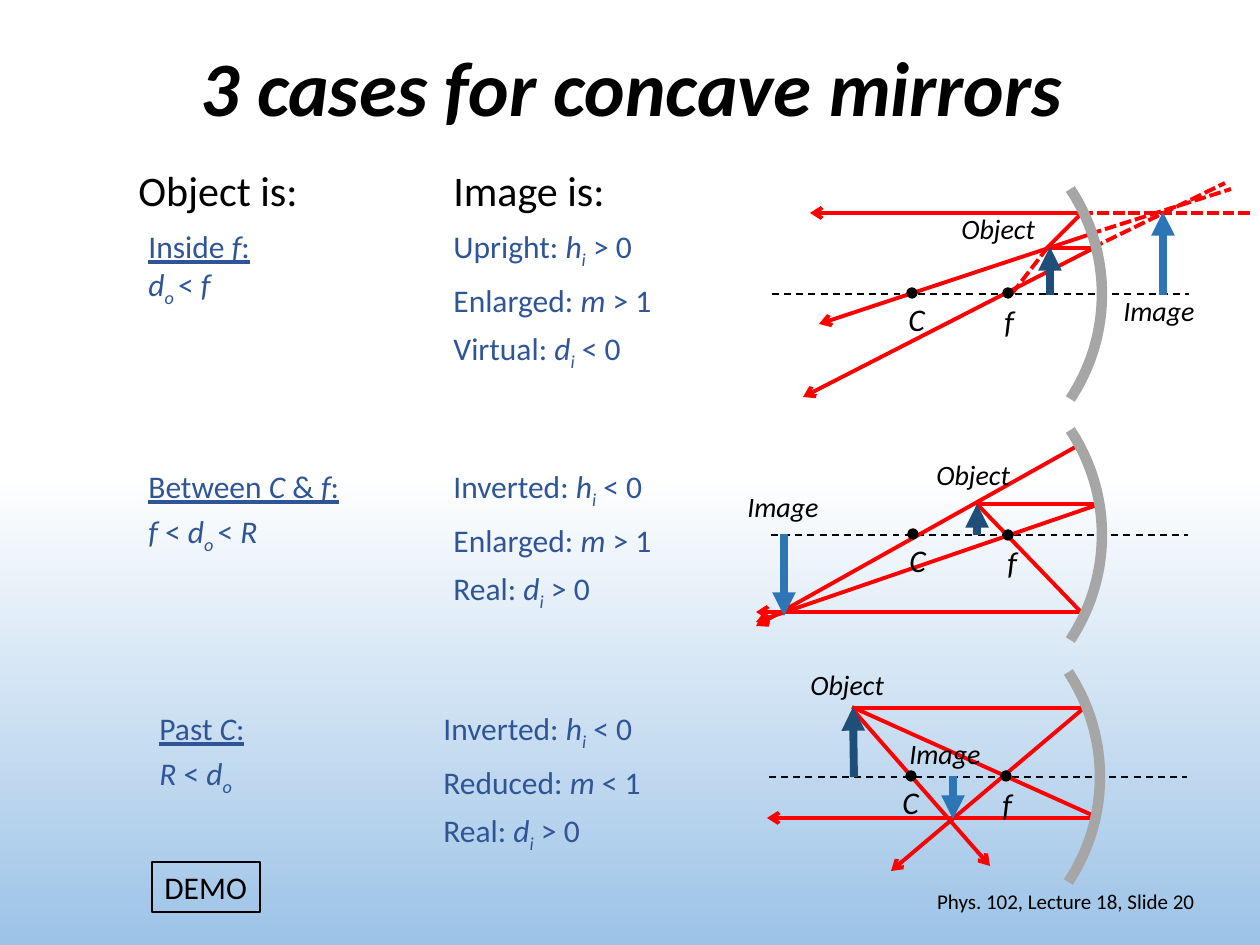
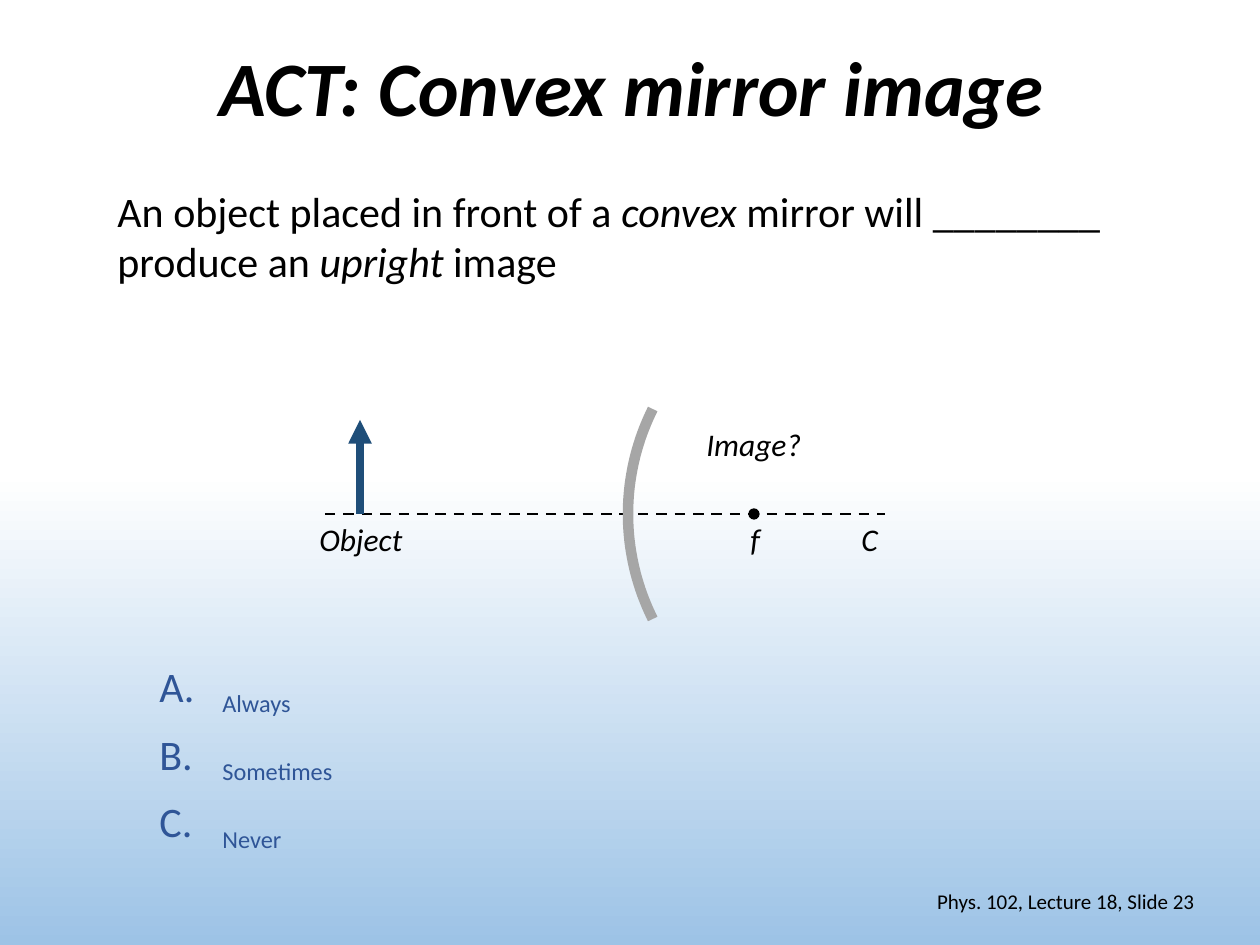
"""Builds two lecture slides on concave and convex mirror images."""
import math

from lxml import etree
from pptx import Presentation
from pptx import util as u
from pptx.dml.color import RGBColor
from pptx.enum import dml, shapes, text
from pptx.oxml import ns

PX = 914400 / 126
FONT = "Calibri"
BLACK = RGBColor(0x00, 0x00, 0x00)
WHITE = RGBColor(0xFF, 0xFF, 0xFF)
SKY = RGBColor(0x9D, 0xC3, 0xE6)
BLUE = RGBColor(0x2F, 0x55, 0x97)
RED = RGBColor(0xFF, 0x00, 0x00)
GREY = RGBColor(0xA6, 0xA6, 0xA6)
OBJECT = RGBColor(0x1F, 0x4E, 0x79)
IMAGE = RGBColor(0x2E, 0x75, 0xB6)
DASH = dml.MSO_LINE.DASH
SYS_DASH = dml.MSO_LINE.SQUARE_DOT
MIRROR_HALF = 105
DOT = 10


def add_line(s, ends, color, width, dash=None, tail=None):
    """Draw a straight line, with an arrowhead at its end if tail is given."""
    c = s.shapes.add_connector(shapes.MSO_CONNECTOR.STRAIGHT, *[round(v * PX) for v in ends])
    c.line.color.rgb = color
    c.line.width = u.Pt(width)
    if dash:
        c.line.dash_style = dash
    if tail:
        etree.SubElement(c.line._get_or_add_ln(), ns.qn("a:tailEnd"), type=tail)
    etree.SubElement(c._element.spPr, ns.qn("a:effectLst"))


def add_text(s, box, paras, size, color=BLACK, style="", before=0, after=0):
    """Add a text box; runs are (text, style) with i, b, u and s for subscript."""
    sp = s.shapes.add_textbox(*[round(v * PX) for v in box])
    tf = sp.text_frame
    tf.word_wrap = True
    for i, runs in enumerate(paras):
        p = tf.paragraphs[0] if i == 0 else tf.add_paragraph()
        p.space_before, p.space_after = u.Pt(before), u.Pt(after)
        for words, marks in [(runs, style)] if isinstance(runs, str) else runs:
            r = p.add_run()
            r.text = words
            r.font.name = FONT
            r.font.size = u.Pt(size)
            r.font.color.rgb = color
            r.font.italic = "i" in marks
            r.font.bold = "b" in marks
            r.font.underline = "u" in marks
            if "s" in marks:
                r.font._element.set("baseline", "-25000")
    return sp


prs = Presentation()
prs.slide_width, prs.slide_height = round(1260 * PX), round(945 * PX)

fill = prs.slide_master.background.fill
fill.gradient()
fill.gradient_angle = 270
for stop, position, color in zip(fill.gradient_stops, (0.5, 1), (WHITE, SKY)):
    stop.position = position
    stop.color.rgb = color

for title, number in [("3 cases for concave mirrors", 20), ("ACT: Convex mirror image", 23)]:
    s = prs.slides.add_slide(prs.slide_layouts[6])
    heading = add_text(s, (89, 0, 1086, 183), [title], 44, style="bi")
    heading.text_frame.paragraphs[0].line_spacing = 0.9
    footer = add_text(s, (890, 876, 317, 50), [f"Phys. 102, Lecture 18, Slide {number}"], 12)
    for sp, align in [(heading, text.PP_ALIGN.CENTER), (footer, text.PP_ALIGN.RIGHT)]:
        sp.text_frame.vertical_anchor = text.MSO_ANCHOR.MIDDLE
        sp.text_frame.paragraphs[0].alignment = align
concave, convex = prs.slides

cases = [
    dict(
        axis=(772, 294, 1189, 294),
        rays=[(1086, 209, 1046, 249), (1047, 248, 1094, 248)],
        arrows=[(1094, 248, 803, 397), (1091, 234, 819, 324), (1082, 213, 810, 213)],
        virtual=[(1092, 248, 1225, 183), (1250, 213, 1082, 213),
                 (1090, 234, 1231, 189), (1048, 247, 1011, 295)],
        object=(1050, 295, 1050, 247),
        image=(1163, 295, 1163, 212),
        labels=[(949, 205), (1111, 287), (896, 294), (992, 296)],
        where=(136, 221),
        place=[[("Inside ", "u"), ("f", "ui"), (":", "u")],
               [("d", "i"), ("o ", "is"), ("<", ""), (" f", "i")]],
        place_gap=0,
        result=(441, 221),
        words=[("Upright", ">"), ("Enlarged", ">"), ("Virtual", "<")],
    ),
    dict(
        axis=(771, 535, 1188, 535),
        rays=[(1080, 611, 977, 504), (977, 504, 1096, 504)],
        arrows=[(1097, 505, 756, 622), (1079, 445, 756, 626), (1082, 612, 756, 612)],
        virtual=[],
        object=(977, 535, 977, 504),
        image=(784, 534, 784, 616),
        labels=[(924, 451), (735, 483), (897, 535), (995, 537)],
        where=(136, 461),
        place=[[("Between ", "u"), ("C", "ui"), (" & ", "u"), ("f", "ui"), (":", "u")],
               [("f ", "i"), ("<", ""), (" d", "i"), ("o ", "is"), ("<", ""), (" R", "i")]],
        place_gap=4,
        result=(441, 461),
        words=[("Inverted", "<"), ("Enlarged", ">"), ("Real", ">")],
    ),
    dict(
        axis=(769, 777, 1187, 777),
        rays=[(1092, 815, 852, 707), (854, 708, 1084, 708)],
        arrows=[(1084, 708, 891, 871), (854, 711, 990, 866), (1092, 818, 767, 818)],
        virtual=[],
        object=(854, 777, 853, 707),
        image=(953, 776, 953, 819),
        labels=[(798, 661), (897, 730), (890, 777), (990, 779)],
        where=(147, 703),
        place=[[("Past ", "u"), ("C", "ui"), (":", "u")],
               [("R ", "i"), ("<", ""), (" d", "i"), ("o", "is")]],
        place_gap=4,
        result=(431, 703),
        words=[("Inverted", "<"), ("Reduced", "<"), ("Real", ">")],
    ),
]

add_text(concave, (126, 158, 200, 63), ["Object is:"], 24)
add_text(concave, (441, 158, 200, 63), ["Image is:"], 24)
for case in cases:
    add_line(concave, case["axis"], BLACK, 1, DASH)
    for ray in case["rays"]:
        add_line(concave, ray, RED, 2.25)
    for ray in case["arrows"]:
        add_line(concave, ray, RED, 2.25, tail="arrow")
    add_line(concave, case["object"], OBJECT, 4.5, tail="triangle")
    for ray in case["virtual"]:
        add_line(concave, ray, RED, 2.25, SYS_DASH)
    add_line(concave, case["image"], IMAGE, 4.5, tail="triangle")
    names = [("Object", 116, 16), ("Image", 112, 16), ("C", 44, 18), ("f", 36, 18)]
    for (x, y), (name, width, size) in zip(case["labels"], names):
        add_text(concave, (x, y, width, 50), [name], size, style="i")
    add_text(concave, (*case["where"], 230, 105), case["place"], 18, BLUE,
             before=case["place_gap"])
    (upright, h), (scale, m), (kind, d) = case["words"]
    result = [[(f"{upright}: ", ""), ("h", "i"), ("i", "is"), (f" {h} 0", "")],
              [(f"{scale}: ", ""), ("m", "i"), (f" {m} 1", "")],
              [(f"{kind}: ", ""), ("d", "i"), ("i", "is"), (f" {d} 0", "")]]
    add_text(concave, (*case["result"], 243, 149), result, 18, BLUE, after=6)
demo = add_text(concave, (152, 862, 108, 50), ["DEMO"], 18)
demo.line.color.rgb = BLACK
demo.line.width = u.Pt(0.75)

question = [[("An object placed in front of a ", ""), ("convex", "i"),
             (" mirror will ________ produce an ", ""), ("upright", "i"), (" image", "")]]
add_text(convex, (105, 179, 1050, 115), question, 24)
answers = add_text(convex, (147, 654, 336, 186), ["Always", "Sometimes", "Never"], 24, BLUE,
                   style="s", after=6)
for p in answers.text_frame.paragraphs:
    pPr = p._p.get_or_add_pPr()
    pPr.set("marL", str(round(63 * PX)))
    pPr.set("indent", str(round(-63 * PX)))
    etree.SubElement(pPr, ns.qn("a:buAutoNum"), type="alphaUcPeriod")
add_line(convex, (325, 514, 885, 514), BLACK, 1.5, DASH)
add_line(convex, (360, 514, 360, 420), OBJECT, 4.5, tail="triangle")
for name, x, y, width in [("C", 849, 514, 42), ("f", 738, 514, 36),
                          ("Image?", 694, 419, 126), ("Object", 307, 514, 115)]:
    add_text(convex, (x, y, width, 50), [name], 18, style="i")

mirrors = [
    (concave, 1102, 294, 190, [(912, 293), (1008, 293)]),
    (concave, 1102, 535, 190, [(913, 534), (1008, 535)]),
    (concave, 1100, 777, 190, [(911, 776), (1006, 776)]),
    (convex, 628, 514, -235, [(754, 514)]),
]
for s, vertex, middle, radius, dots in mirrors:
    half_angle = math.asin(MIRROR_HALF / abs(radius))
    angles = [half_angle * i / 20 for i in range(-20, 21)]
    points = [(round((vertex - radius * (1 - math.cos(a))) * PX),
               round((middle + abs(radius) * math.sin(a)) * PX)) for a in angles]
    builder = s.shapes.build_freeform(*points[0])
    builder.add_line_segments(points[1:], close=False)
    mirror = builder.convert_to_shape()
    mirror.shadow.inherit = False
    mirror.fill.background()
    mirror.line.color.rgb = GREY
    mirror.line.width = u.Pt(6)
    for x, y in dots:
        box = [round(v * PX) for v in (x - DOT / 2, y - DOT / 2, DOT, DOT)]
        dot = s.shapes.add_shape(shapes.MSO_SHAPE.OVAL, *box)
        dot.shadow.inherit = False
        dot.fill.solid()
        dot.fill.fore_color.rgb = BLACK
        dot.line.color.rgb = BLACK
        dot.line.width = u.Pt(0.75)

prs.save("out.pptx")
